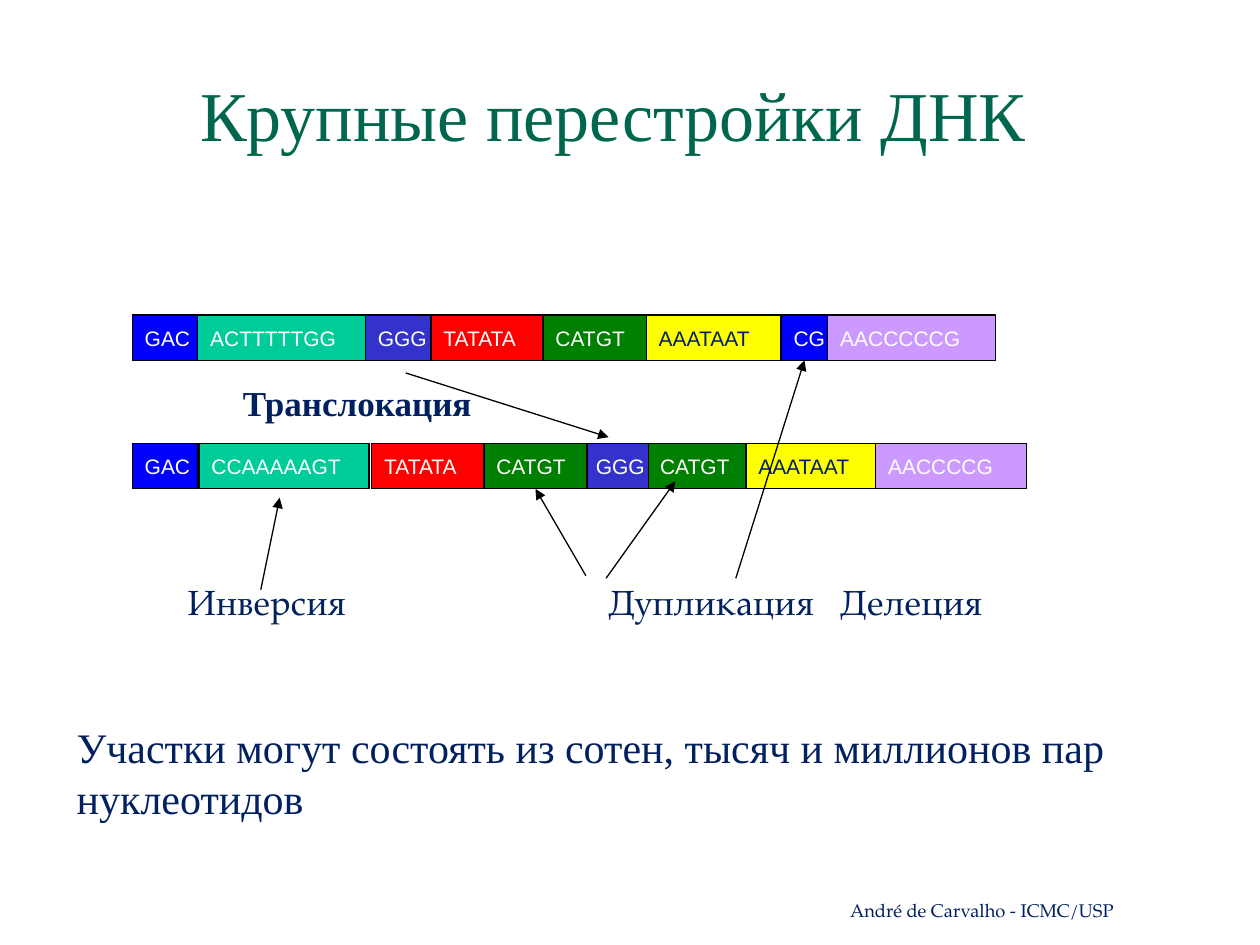
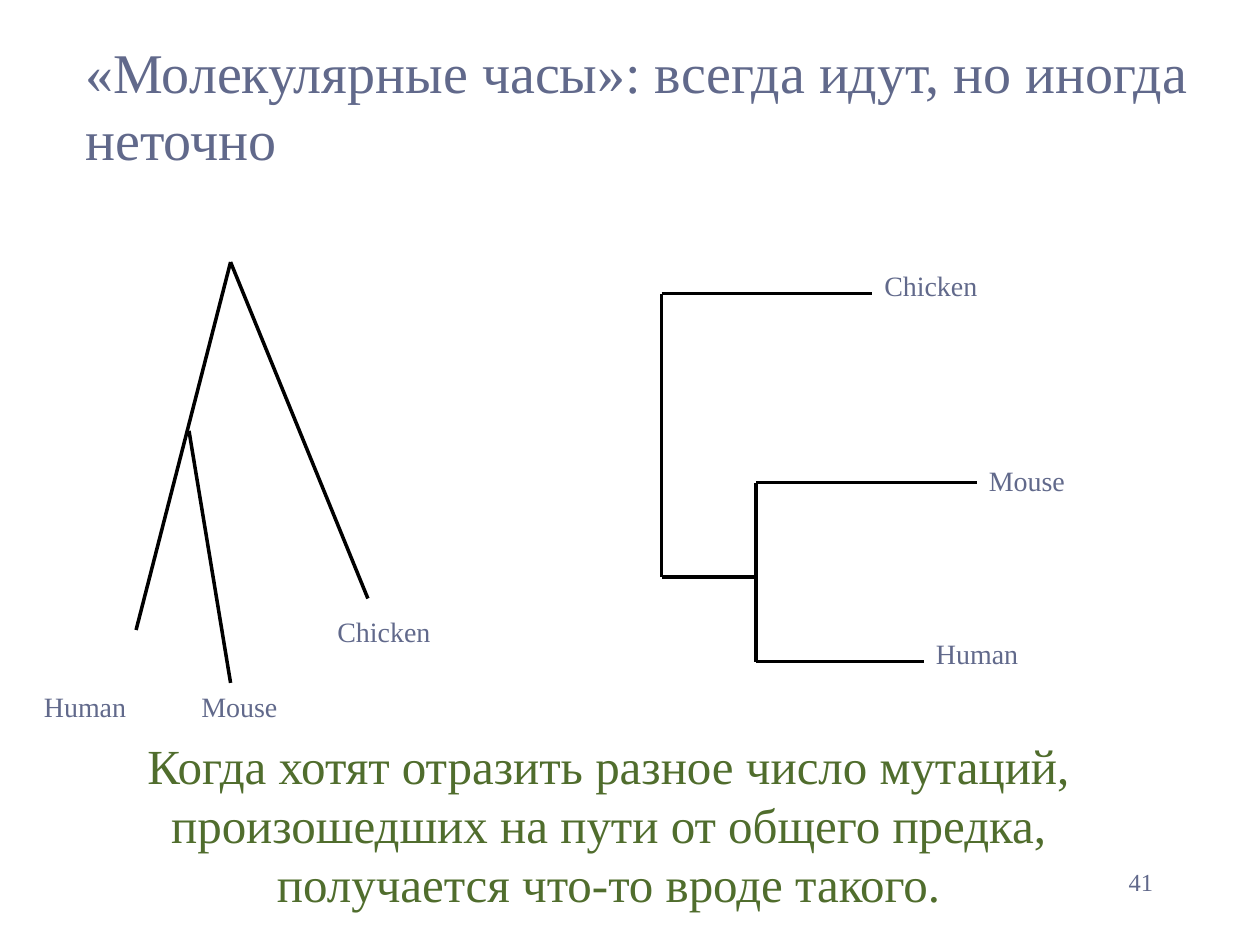
import pptx
import pptx.dml.color
import pptx.enum.shapes
import pptx.enum.text
import pptx.oxml
import pptx.oxml.ns
import pptx.util
from dataclasses import dataclass

Inches = pptx.util.Inches
Pt = pptx.util.Pt
ALIGN = pptx.enum.text.PP_ALIGN
ANCHOR = pptx.enum.text.MSO_ANCHOR


@dataclass(frozen=True)
class Theme:
    serif: str = "Times New Roman"
    book: str = "TeX Gyre Pagella"
    sans: str = "Arial"
    navy: str = "002060"
    slate: str = "61698B"
    green: str = "00664D"
    olive: str = "506D2D"
    black: str = "000000"
    white: str = "FFFFFF"
    title: float = 40
    clock_title: float = 32
    conclusion: float = 28
    body: float = 24
    label: float = 20
    species: float = 16
    page_number: float = 14
    bases: float = 12
    footer: float = 10.5
    thin: float = 0.75
    branch: float = 2


THEME = Theme()

SEGMENT_FILL = {
    "GAC": "0000FF", "CG": "0000FF", "GGG": "3333CC", "TATATA": "FF0000",
    "CATGT": "008000", "AAATAAT": "FFFF00", "ACTTTTTGG": "00CC99",
    "CCAAAAAGT": "00CC99", "AACCCCCG": "CC99FF", "AACCCCG": "CC99FF",
}
DARK_TEXT = {"AAATAAT"}


def rgb(value):
    return pptx.dml.color.RGBColor.from_string(value)


def add_xml(parent, xml):
    parent.append(pptx.oxml.parse_xml(
        xml.replace(">", f" {pptx.oxml.ns.nsdecls('a')}>", 1)))


def write(frame, text, size, color, font, bold=False, align=ALIGN.LEFT,
          anchor=ANCHOR.TOP, wrap=True, insets=(0.1, 0.05), tab_stops=()):
    frame.word_wrap = wrap
    frame.vertical_anchor = anchor
    frame.margin_left = frame.margin_right = Inches(insets[0])
    frame.margin_top = frame.margin_bottom = Inches(insets[1])
    frame.text = text
    paragraph = frame.paragraphs[0]
    paragraph.alignment = align
    if tab_stops:
        stops = "".join(f'<a:tab pos="{Inches(stop)}" algn="l"/>' for stop in tab_stops)
        add_xml(paragraph._p.get_or_add_pPr(), f"<a:tabLst>{stops}</a:tabLst>")
    for run in paragraph.runs:
        run.font.name = font
        run.font.size = Pt(size)
        run.font.bold = bold
        run.font.color.rgb = rgb(color)


def add_text(slide, box, text, size, color, font=THEME.serif, **style):
    label = slide.shapes.add_textbox(*map(Inches, box))
    write(label.text_frame, text, size, color, font, **style)


def add_line(slide, start, end, width, arrow=False):
    line = slide.shapes.add_connector(
        pptx.enum.shapes.MSO_CONNECTOR.STRAIGHT, *map(Inches, (*start, *end)))
    line.line.color.rgb = rgb(THEME.black)
    line.line.width = Pt(width)
    if arrow:
        add_xml(line.line._get_or_add_ln(), '<a:tailEnd type="triangle"></a:tailEnd>')
    add_xml(line._element.spPr, "<a:effectLst></a:effectLst>")
    return line


def add_segment(slide, box, bases):
    segment = slide.shapes.add_shape(
        pptx.enum.shapes.MSO_SHAPE.RECTANGLE, *map(Inches, box))
    segment.shadow.inherit = False
    segment.fill.solid()
    segment.fill.fore_color.rgb = rgb(SEGMENT_FILL[bases])
    segment.line.color.rgb = rgb(THEME.black)
    segment.line.width = Pt(THEME.thin)
    write(segment.text_frame, bases, THEME.bases,
          THEME.navy if bases in DARK_TEXT else THEME.white,
          THEME.sans, anchor=ANCHOR.MIDDLE, wrap=False)
    return segment


def source_strand(slide, box):
    """Segments laid end to end; returns the one that is later deleted."""
    left, top, _, height = box
    widths = {"GAC": 0.52, "ACTTTTTGG": 1.33, "GGG": 0.52, "TATATA": 0.89,
              "CATGT": 0.82, "AAATAAT": 1.07, "CG": 0.37, "AACCCCCG": 1.33}
    segments = {}
    for bases, width in widths.items():
        segments[bases] = add_segment(slide, (left, top, width, height), bases)
        left += width
    return segments["CG"]


def rearranged_strand(slide, box):
    """Segments after rearrangement; returns the duplicated one."""
    left, top, _, height = box
    # Bases, offset from the strand's left, width; later ones overlap earlier
    placed = [("CCAAAAAGT", 0.53, 1.35), ("GAC", 0, 0.52),
              ("AAATAAT", 4.87, 1.04), ("AACCCCG", 5.9, 1.2),
              ("CATGT", 4.09, 0.78), ("GGG", 3.58, 0.52),
              ("TATATA", 1.9, 0.89), ("CATGT", 2.79, 0.82)]
    for bases, offset, width in placed:
        segment = add_segment(slide, (left + offset, top, width, height), bases)
    return segment


def rearrangement_diagram(slide, box):
    left, top, width, _ = box

    def at(x, y):
        return left + x, top + y

    add_text(slide, (*at(0.34, 2.06), 7.56, 0.43),
             "Инверсия\tДупликация\tДелеция", THEME.label, THEME.navy,
             THEME.book, tab_stops=(3.34, 5.18))
    deleted = source_strand(slide, (left, top, width, 0.36))
    duplicated = rearranged_strand(slide, (left, top + 1.02, width, 0.36))

    # Arrows: inversion, translocation, second copy
    for start, end in [((1.02, 2.18), (1.17, 1.45)),
                       ((2.17, 0.46), (3.78, 0.97)),
                       ((3.76, 2.09), (4.31, 1.32))]:
        add_line(slide, at(*start), at(*end), THEME.thin, arrow=True)

    # Arrows joined to the segments they point at
    for start, end, segment in [((4.79, 2.09), (5.33, 0.36), deleted),
                                ((3.6, 2.07), (3.2, 1.38), duplicated)]:
        arrow = add_line(slide, at(*start), at(*end), THEME.thin, arrow=True)
        arrow.end_connect(segment, 2)

    # Wide enough to hold the word on one line
    add_text(slide, (*at(0.78, 0.48), 2.3, 0.43), "Транслокация",
             THEME.label, THEME.navy, bold=True)


def rearrangements_slide(slide):
    placeholder_style = dict(anchor=ANCHOR.MIDDLE, insets=(0.08, 0.04))
    add_text(slide, (4.47, 7.07, 4.45, 0.3), "André de Carvalho - ICMC/USP",
             THEME.footer, THEME.navy, THEME.book, align=ALIGN.RIGHT,
             **placeholder_style)
    add_text(slide, (1.51, 0.43, 6.98, 0.94), "Крупные перестройки ДНК",
             THEME.title, THEME.green, **placeholder_style)
    rearrangement_diagram(slide, (1.05, 2.5, 7.1, 2.5))
    add_text(slide, (0.51, 5.68, 8.82, 0.9),
             "Участки могут состоять из сотен, тысяч и миллионов пар нуклеотидов",
             THEME.body, THEME.navy)


def species_tree(slide, box, branches, species):
    """Branches and species names, both measured from the box's corner."""
    left, top = box[:2]
    for x1, y1, x2, y2 in branches:
        add_line(slide, (left + x1, top + y1), (left + x2, top + y2), THEME.branch)
    for name, x, y, width in species:
        add_text(slide, (left + x, top + y, width, 0.37), name,
                 THEME.species, THEME.slate)


def molecular_clock_slide(slide):
    add_text(slide, (0.33, 5.79, 9, 1.5),
             "Когда хотят отразить разное число мутаций, произошедших на пути "
             "от общего предка, получается что-то вроде такого.",
             THEME.conclusion, THEME.olive, align=ALIGN.CENTER,
             anchor=ANCHOR.MIDDLE)
    # Slanted tree
    species_tree(
        slide, (0.25, 2.08, 4, 3.71),
        [(1.58, 0, 0.83, 2.92), (1.58, 0, 2.67, 2.67), (1.25, 1.34, 1.58, 3.34)],
        [("Human", 0, 3.34, 0.92), ("Chicken", 2.33, 2.75, 1.67),
         ("Mouse", 1.25, 3.34, 1.25)])
    # Rectangular tree
    species_tree(
        slide, (5.25, 2.08, 3.75, 3.29),
        [(0, 0.25, 0, 2.5), (0, 0.25, 1.67, 0.25), (0, 2.5, 0.75, 2.5),
         (0.75, 1.75, 0.75, 3.17), (0.75, 1.75, 2.5, 1.75),
         (0.75, 3.17, 2.08, 3.17)],
        [("Human", 2.08, 2.92, 0.92), ("Mouse", 2.5, 1.55, 1.25),
         ("Chicken", 1.67, 0, 1.67)])
    add_text(slide, (0.58, 0.25, 9, 1.17),
             "«Молекулярные часы»: всегда идут, но иногда неточно",
             THEME.clock_title, THEME.slate)
    add_text(slide, (7.17, 6.83, 2.08, 0.5), "41", THEME.page_number,
             THEME.slate, align=ALIGN.RIGHT)


def main():
    deck = pptx.Presentation()
    deck.slide_width, deck.slide_height = Inches(10), Inches(7.5)
    for build in (rearrangements_slide, molecular_clock_slide):
        build(deck.slides.add_slide(deck.slide_layouts[6]))
    deck.save("out.pptx")


if __name__ == "__main__":
    main()
